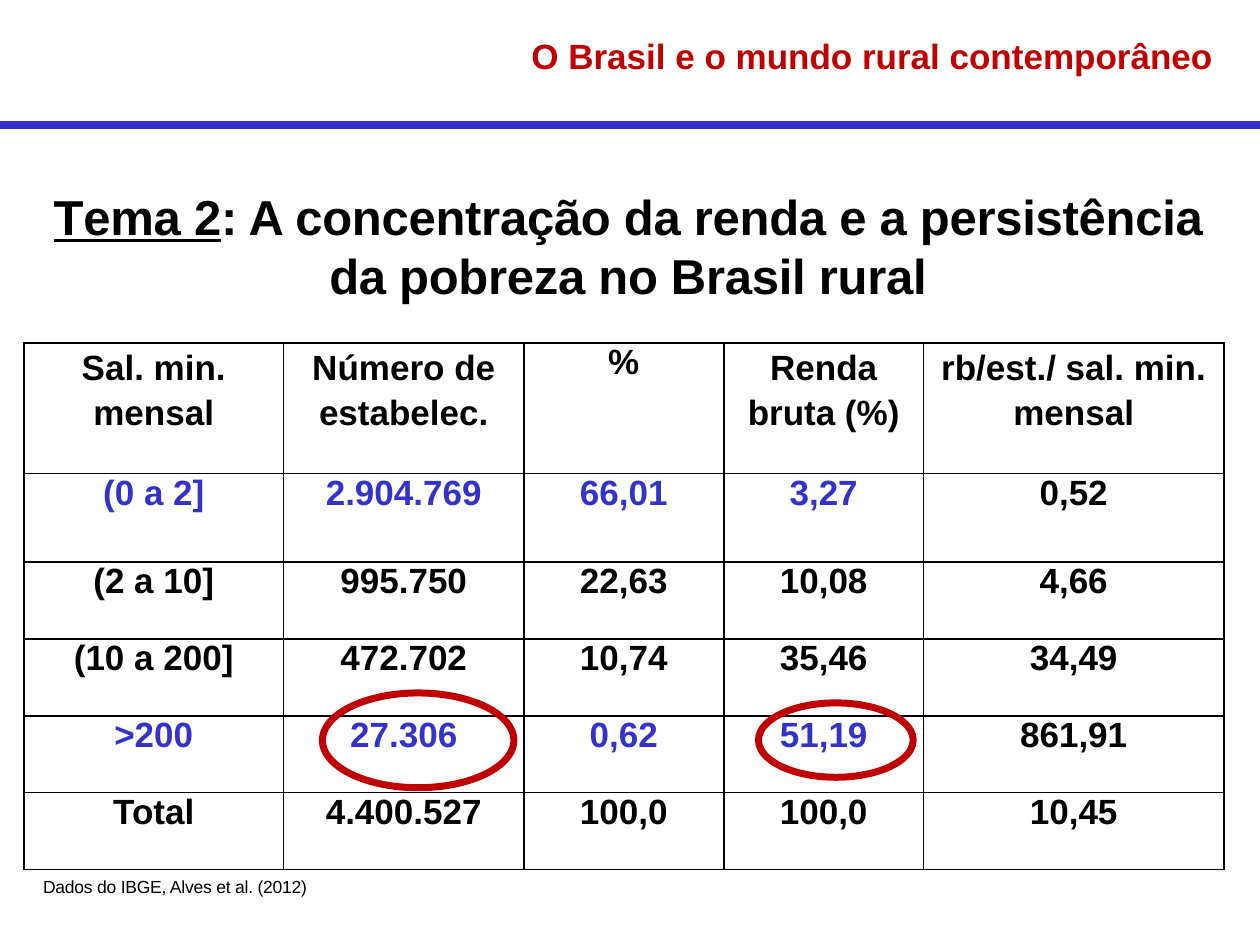
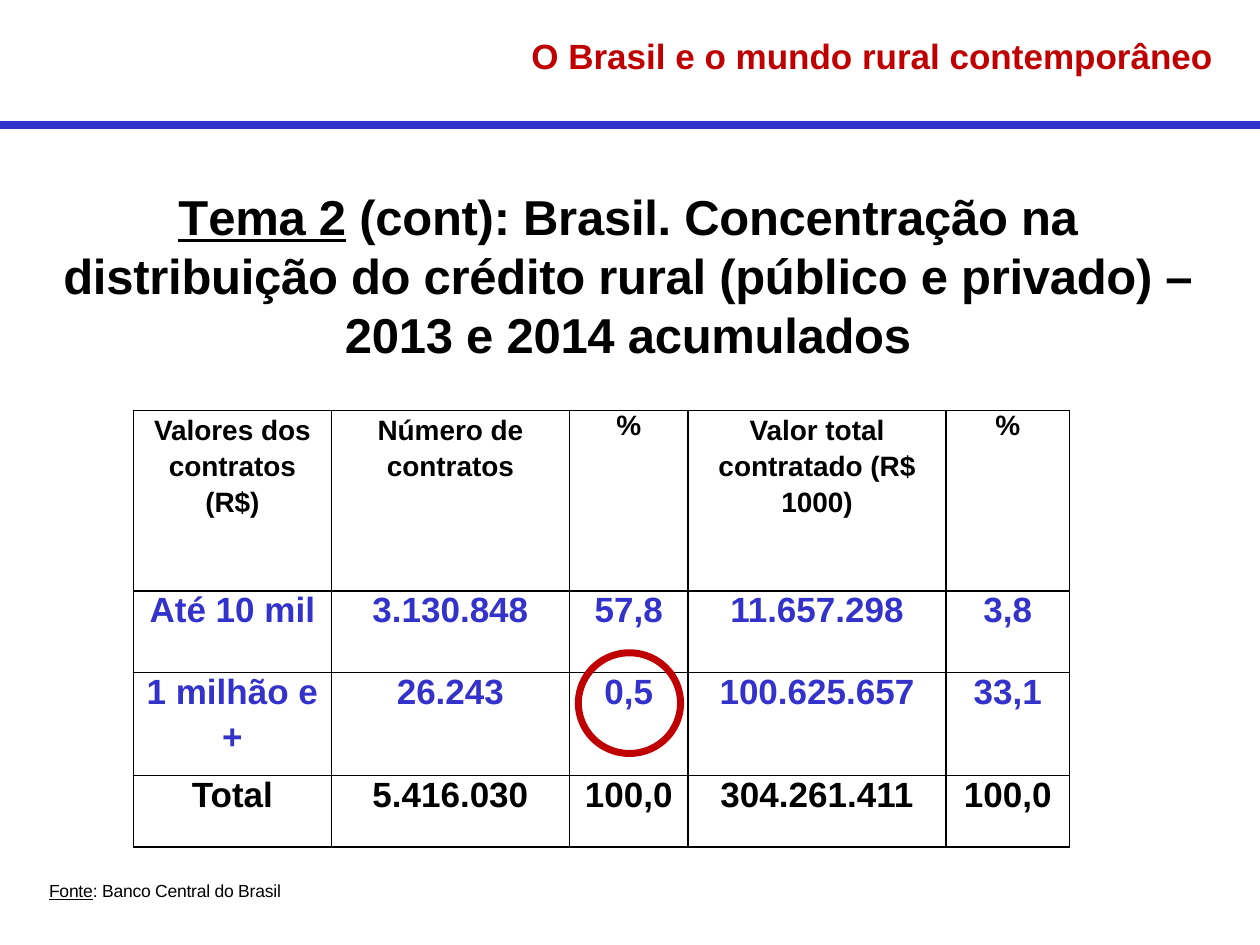
from dataclasses import dataclass

from lxml.etree import SubElement
from pptx import Presentation
from pptx.dml.color import RGBColor
from pptx.enum.shapes import MSO_CONNECTOR, MSO_SHAPE
from pptx.enum.text import PP_ALIGN
from pptx.oxml import parse_xml
from pptx.oxml.ns import nsdecls, qn
from pptx.util import Cm, Pt


@dataclass(frozen=True)
class Theme:
    font: str = "Arial"
    black: RGBColor = RGBColor(0x00, 0x00, 0x00)
    blue: RGBColor = RGBColor(0x33, 0x33, 0xCC)
    red: RGBColor = RGBColor(0xC0, 0x00, 0x00)
    heading_size: int = 20
    title_size: int = 28
    body_size: int = 20
    source_size: int = 10
    rule_width: float = 4.5
    ring_width: float = 4
    border_width: float = 1


theme = Theme()


def add_run(paragraph, text, size, color=theme.black, bold=True, underline=False, spacing=0):
    """Add one formatted run; spacing is in hundredths of a point."""
    run = paragraph.add_run()
    run.text = text
    run.font.name = theme.font
    run.font.size = Pt(size)
    run.font.bold = bold
    run.font.underline = underline
    run.font.color.rgb = color
    if spacing:
        run._r.get_or_add_rPr().set("spc", str(spacing))


def add_text_box(slide, left, top, width, height, alignment):
    """Add a wrapping box without margins and return its first paragraph."""
    frame = slide.shapes.add_textbox(Cm(left), Cm(top), Cm(width), Cm(height)).text_frame
    frame.word_wrap = True
    frame.margin_left = frame.margin_right = frame.margin_top = frame.margin_bottom = 0
    paragraph = frame.paragraphs[0]
    paragraph.alignment = alignment
    return paragraph


# Runs of the titles and sources are (text, underlined) pairs.
# A line feed in a table cell starts a new paragraph.
pages = [
    {
        "title": [
            ("ema 2", True),
            (": A concentração da renda e a persistência da pobreza no Brasil rural", False),
        ],
        "source": [("Dados do IBGE, Alves et al. (2012)", False)],
        "source_position": (0.87, 17.65),
        "table_position": (0.48, 6.91),
        "column_widths": [5.24, 4.84, 4.03, 4.03, 6.05],
        "row_heights": [2.64, 1.78, 1.55, 1.55, 1.55, 1.55],
        "header_size": 20,
        "blue_rows": (1, 4),
        "blue_columns": 4,
        "rows": [
            ["Sal. min. mensal", "Número de estabelec.", "%", "Renda bruta (%)",
             "rb/est./ sal. min. mensal"],
            ["(0 a 2]", "2.904.769", "66,01", "3,27", "0,52"],
            ["(2 a 10]", "995.750", "22,63", "10,08", "4,66"],
            ["(10 a 200]", "472.702", "10,74", "35,46", "34,49"],
            [">200", "27.306", "0,62", "51,19", "861,91"],
            ["Total", "4.400.527", "100,0", "100,0", "10,45"],
        ],
        "rings": [(6.5, 13.97, 3.86, 1.91), (15.29, 14.17, 3.12, 1.5)],
    },
    {
        "title": [
            ("ema 2", True),
            (" (cont): Brasil. Concentração na distribuição do crédito rural "
             "(público e privado) – 2013 e 2014 acumulados", False),
        ],
        "source": [("Fonte", True), (": Banco Central do Brasil", False)],
        "source_position": (0.99, 17.75),
        "table_position": (2.69, 8.28),
        "column_widths": [3.99, 4.8, 2.39, 5.2, 2.49],
        "row_heights": [3.63, 1.65, 2.07, 1.44],
        "header_size": 16,
        "blue_rows": (1, 2),
        "blue_columns": 5,
        "rows": [
            ["Valores dos contratos (R$)", "Número de contratos", "%",
             "Valor total contratado (R$ 1000)", "%"],
            ["Até 10 mil", "3.130.848", "57,8", "11.657.298", "3,8"],
            ["1 milhão e\n+", "26.243", "0,5", "100.625.657", "33,1"],
            ["Total", "5.416.030", "100,0", "304.261.411", "100,0"],
        ],
        "rings": [(11.66, 13.16, 2.06, 2.03)],
    },
]

presentation = Presentation()
presentation.slide_width = Cm(25.4)
presentation.slide_height = Cm(19.05)

for page in pages:
    slide = presentation.slides.add_slide(presentation.slide_layouts[6])

    # Heading band
    heading = add_text_box(slide, 0.66, 0.69, 23.8, 0.9, PP_ALIGN.RIGHT)
    add_run(heading, "O Brasil e o mundo rural contemporâneo", theme.heading_size, theme.red)
    rule = slide.shapes.add_connector(
        MSO_CONNECTOR.STRAIGHT, 0, Cm(2.52), presentation.slide_width, Cm(2.52))
    rule.line.color.rgb = theme.blue
    rule.line.width = Pt(theme.rule_width)
    SubElement(rule._element.spPr, qn("a:effectLst"))

    # Title, with the first letter drawn close to the next
    title = add_text_box(slide, 0.76, 3.76, 23.8, 2.4, PP_ALIGN.CENTER)
    add_run(title, "T", theme.title_size, underline=True, spacing=-230)
    for text, underline in page["title"]:
        add_run(title, text, theme.title_size, underline=underline, spacing=-15)

    # Table
    rows, widths, heights = page["rows"], page["column_widths"], page["row_heights"]
    left, top = page["table_position"]
    table = slide.shapes.add_table(
        len(rows), len(widths), Cm(left), Cm(top), Cm(sum(widths)), Cm(sum(heights))).table
    table.first_row = table.horz_banding = False
    for column, width in zip(table.columns, widths):
        column.width = Cm(width)
    for row, height in zip(table.rows, heights):
        row.height = Cm(height)

    for row_index, values in enumerate(rows):
        is_header = row_index == 0
        for column_index, value in enumerate(values):
            cell = table.cell(row_index, column_index)
            cell.margin_top = cell.margin_bottom = 0
            cell.margin_left = cell.margin_right = Cm(0.25 if is_header else 0)
            properties = cell._tc.get_or_add_tcPr()
            for side in ("lnL", "lnR", "lnT", "lnB"):
                properties.append(parse_xml(
                    f'<a:{side} {nsdecls("a")} w="{Pt(theme.border_width)}"><a:solidFill>'
                    f'<a:srgbClr val="{theme.black}"/></a:solidFill></a:{side}>'))
            cell.fill.background()

            is_blue = row_index in page["blue_rows"] and column_index < page["blue_columns"]
            for line_index, line in enumerate(value.split("\n")):
                if line_index == 0:
                    paragraph = cell.text_frame.paragraphs[0]
                else:
                    paragraph = cell.text_frame.add_paragraph()
                    paragraph.space_before = Pt(3.6)
                paragraph.alignment = PP_ALIGN.CENTER
                if is_header and value != "%":
                    paragraph.line_spacing = 1.15
                add_run(paragraph, line,
                        page["header_size"] if is_header else theme.body_size,
                        theme.blue if is_blue else theme.black)

    # Rings around the key values
    for ring_box in page["rings"]:
        ring = slide.shapes.add_shape(MSO_SHAPE.OVAL, *map(Cm, ring_box))
        ring.shadow.inherit = False
        ring.fill.background()
        ring.line.color.rgb = theme.red
        ring.line.width = Pt(theme.ring_width)

    # Source
    source = add_text_box(slide, *page["source_position"], 8, 0.46, PP_ALIGN.LEFT)
    for text, underline in page["source"]:
        add_run(source, text, theme.source_size, bold=False, underline=underline, spacing=-10)

presentation.save("out.pptx")
